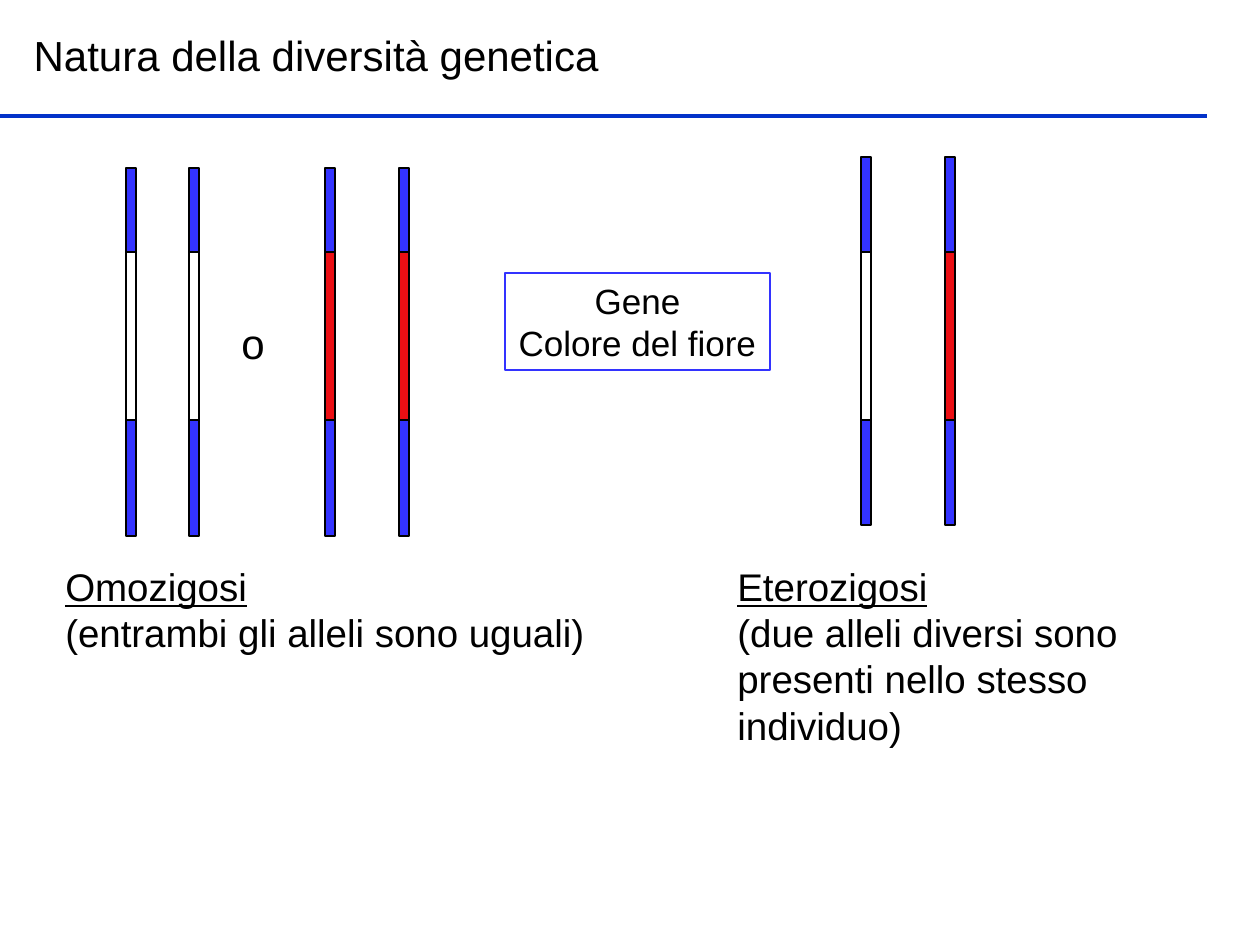
from pptx import Presentation
from pptx.dml.color import RGBColor
from pptx.enum.shapes import MSO_CONNECTOR, MSO_SHAPE
from pptx.enum.text import MSO_ANCHOR, PP_ALIGN
from pptx.oxml.ns import qn
from pptx.util import Emu, Pt

RECT = MSO_SHAPE.RECTANGLE
STRAIGHT = MSO_CONNECTOR.STRAIGHT
LEFT, CENTER = PP_ALIGN.LEFT, PP_ALIGN.CENTER
TOP, MIDDLE = MSO_ANCHOR.TOP, MSO_ANCHOR.MIDDLE

PX = 914400 / 126
BLUE, RED, WHITE, BLACK = "3333FF", "EB0F14", "FFFFFF", "000000"


def px(*values):
    return [Emu(round(v * PX)) for v in values]


def write(sp, lines, size, align=LEFT, anchor=TOP, wrap=True, underline_first=False):
    tf = sp.text_frame
    tf.word_wrap = wrap
    tf.vertical_anchor = anchor
    for i, line in enumerate(lines):
        p = tf.paragraphs[0] if i == 0 else tf.add_paragraph()
        p.alignment = align
        r = p.add_run()
        r.text = line
        r.font.name = "Arial"
        r.font.size = Pt(size)
        r.font.color.rgb = RGBColor.from_string(BLACK)
        if underline_first and i == 0:
            r.font.underline = True


prs = Presentation()
prs.slide_width, prs.slide_height = px(1260, 945)
s = prs.slides.add_slide(prs.slide_layouts[5])

# Title and rule
title = s.shapes.title
title.left, title.top, title.width, title.height = px(21, 23, 1071, 63)
write(title, ["Natura della diversità genetica"], 24, anchor=MIDDLE)

rule = s.shapes.add_connector(STRAIGHT, *px(0, 116, 1207, 116))
rule.line.color.rgb = RGBColor.from_string("0332C9")
rule.line.width = Pt(2)
rule._element.spPr.append(rule._element.spPr.makeelement(qn("a:effectLst"), {}))

# Chromosomes, each with its allele: left, top, allele colour
chromosomes = [
    (126, 168, WHITE), (189, 168, WHITE),
    (325, 168, RED), (399, 168, RED),
    (861, 157, WHITE), (945, 157, RED),
]
for x, y, allele in chromosomes:
    for top, height, color in [(y, 368, BLUE), (252, 168, allele)]:
        sp = s.shapes.add_shape(RECT, *px(x, top, 10, height))
        sp.shadow.inherit = False
        sp.fill.solid()
        sp.fill.fore_color.rgb = RGBColor.from_string(color)
        sp.line.color.rgb = RGBColor.from_string(BLACK)
        sp.line.width = Pt(0.75)

# Captions
captions = [
    (53, 567, 106, ["Omozigosi", "(entrambi gli alleli sono uguali)"]),
    (725, 535, 199, ["Eterozigosi", "(due alleli diversi sono",
                     "presenti nello stesso individuo)"]),
]
for x, width, height, lines in captions:
    tb = s.shapes.add_textbox(*px(x, 557, width, height))
    write(tb, lines, 22, underline_first=True)

tb = s.shapes.add_textbox(*px(229, 311, 49, 63))
write(tb, ["o"], 24, wrap=False)

# Gene label
gene = s.shapes.add_shape(RECT, *px(505, 273, 265, 97))
gene.shadow.inherit = False
gene.fill.background()
gene.line.color.rgb = RGBColor.from_string(BLUE)
gene.line.width = Pt(0.75)
write(gene, ["Gene", "Colore del fiore"], 20, align=CENTER, wrap=False)

prs.save("out.pptx")
